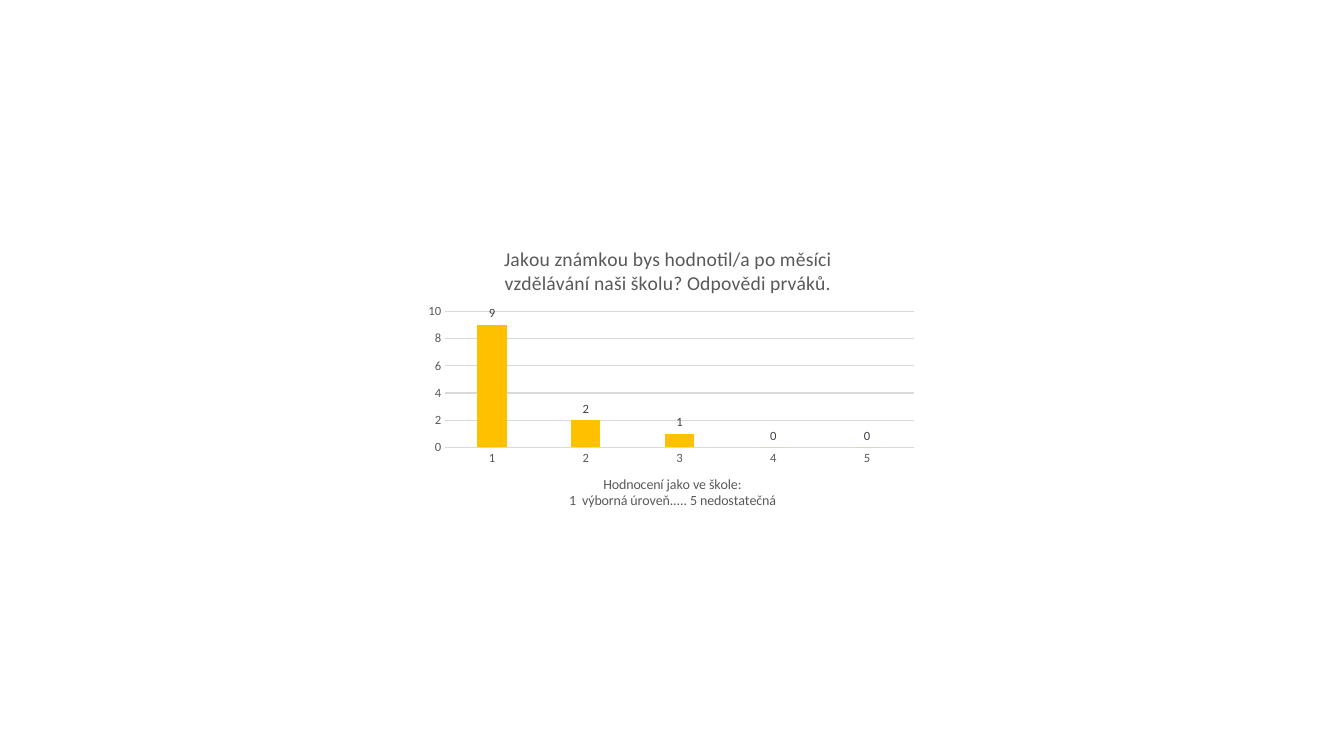
from lxml.etree import SubElement
from pptx import Presentation
from pptx.chart.data import CategoryChartData
from pptx.dml.color import RGBColor
from pptx.enum.chart import XL_CHART_TYPE as ChartType
from pptx.enum.chart import XL_LABEL_POSITION as LabelPos
from pptx.enum.chart import XL_TICK_MARK as Tick
from pptx.oxml.ns import qn
from pptx.util import Inches, Pt

TITLE = ["Jakou známkou bys hodnotil/a po měsíci vzdělávání naši školu? Odpovědi prváků."]
AXIS_TITLE = ["Hodnocení jako ve škole:", "1  výborná úroveň..... 5 nedostatečná"]
SERIES = "Series 1"
RATINGS = {"1": 9, "2": 2, "3": 1, "4": 0, "5": 0}

SLIDE = (13.33, 7.5)
CHART_SIZE = (5, 3)

# Fractions of the chart area
TITLE_AT = {"x": 0.16, "y": 0.05}
AXIS_TITLE_AT = {"x": 0.29, "y": 0.81}
PLOT_AT = {"x": 0.05, "y": 0.28, "w": 0.93, "h": 0.45}

THEME = {
    "font": "Calibri",
    "text": RGBColor.from_string("595959"),
    "label": RGBColor.from_string("404040"),
    "grid": RGBColor.from_string("D9D9D9"),
    "bar": RGBColor.from_string("FFC000"),
    "title_size": 14,
    "axis_title_size": 10,
    "small_size": 9,
}


def style_font(font, size, color):
    font.name = THEME["font"]
    font.size = Pt(size)
    font.bold = False
    font.color.rgb = color


def style_line(line):
    line.color.rgb = THEME["grid"]
    line.width = Pt(0.75)


def set_layout(part, index, place, inner=False):
    """Place a chart part by fractions of the chart area; index is the layout's child position."""
    for old in part.findall(qn("c:layout")):
        part.remove(old)
    layout = SubElement(part, qn("c:layout"))
    part.insert(index, layout)
    manual = SubElement(layout, qn("c:manualLayout"))
    if inner:
        SubElement(manual, qn("c:layoutTarget")).set("val", "inner")
    for key in "xy":
        SubElement(manual, qn(f"c:{key}Mode")).set("val", "edge")
    for key, value in place.items():
        SubElement(manual, qn(f"c:{key}")).set("val", str(value))


def fill_title(title, lines, size, place):
    tf = title.text_frame
    for i, line in enumerate(lines):
        p = tf.add_paragraph() if i else tf.paragraphs[0]
        r = p.add_run()
        r.text = line
        style_font(r.font, size, THEME["text"])
    set_layout(title._element, 1, place)


def add_ratings_chart(slide):
    data = CategoryChartData()
    data.categories = list(RATINGS)
    data.add_series(SERIES, list(RATINGS.values()))
    left, top = ((a - b) / 2 for a, b in zip(SLIDE, CHART_SIZE))
    box = [Inches(v) for v in (left, top, *CHART_SIZE)]
    chart = slide.shapes.add_chart(ChartType.COLUMN_CLUSTERED, *box, data).chart
    chart.has_legend = False
    style_font(chart.font, THEME["small_size"], THEME["text"])

    chart.has_title = True
    fill_title(chart.chart_title, TITLE, THEME["title_size"], TITLE_AT)
    set_layout(chart._chartSpace.chart.plotArea, 0, PLOT_AT, inner=True)

    cat, val = chart.category_axis, chart.value_axis
    for axis in (cat, val):
        axis.major_tick_mark = axis.minor_tick_mark = Tick.NONE
        style_font(axis.tick_labels.font, THEME["small_size"], THEME["text"])
    cat.has_major_gridlines = False
    style_line(cat.format.line)
    fill_title(cat.axis_title, AXIS_TITLE, THEME["axis_title_size"], AXIS_TITLE_AT)
    val.minimum_scale, val.maximum_scale, val.major_unit = 0, 10, 2
    val.format.line.fill.background()
    val.has_major_gridlines = True
    style_line(val.major_gridlines.format.line)

    plot = chart.plots[0]
    plot.gap_width, plot.overlap, plot.vary_by_categories = 219, -27, False
    bars = plot.series[0]
    bars.format.fill.solid()
    bars.format.fill.fore_color.rgb = THEME["bar"]
    labels = bars.data_labels
    labels.show_value = True
    labels.position = LabelPos.OUTSIDE_END
    style_font(labels.font, THEME["small_size"], THEME["label"])


def main():
    prs = Presentation()
    prs.slide_width, prs.slide_height = (Inches(v) for v in SLIDE)
    add_ratings_chart(prs.slides.add_slide(prs.slide_layouts[6]))
    prs.save("out.pptx")


if __name__ == "__main__":
    main()
